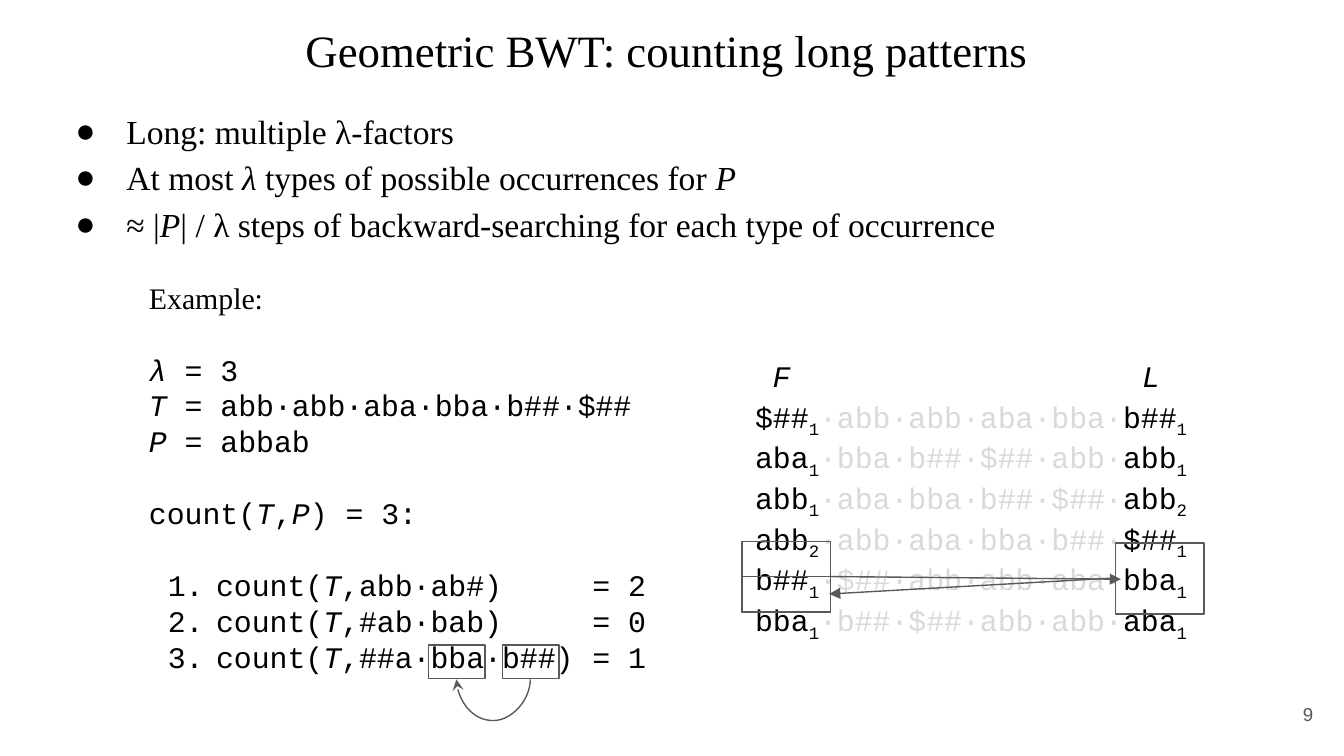
from lxml.etree import SubElement
from pptx import Presentation
from pptx.dml.color import RGBColor
from pptx.enum.shapes import MSO_CONNECTOR as Link, MSO_SHAPE as Shape
from pptx.enum.text import MSO_ANCHOR as Anchor, MSO_AUTO_SIZE as Fit, PP_ALIGN as Align
from pptx.oxml.ns import qn
from pptx.util import Inches, Pt

COLORS = {"text": "000000", "faded": "D9D9D9", "line": "595959"}
SERIF, MONO, SANS = "Times New Roman", "Courier New", "Arial"

TITLE = "Geometric BWT: counting long patterns "
POINTS = [
    "Long: multiple λ-factors",
    "At most *λ *types of possible occurrences for *P*",
    "≈ |*P*| / λ steps of backward-searching for each type of occurrence",
]
DEFINITIONS = ["*λ = *3", "*T* = abb·abb·aba·bba·b##·$##", "*P* = abbab"]
TOTAL = "count(*T*,*P*) = 3:"
COUNTS = ["count(*T*,abb·ab#)\t= 2", "count(*T*,#ab·bab)\t= 0", "count(*T*,##a·bba·b##)\t= 1"]
HEADER = "\t*F\tL*"
ROTATIONS = [
    ("$##", "1", "·abb·abb·aba·bba·", "b##", "1"),
    ("aba", "1", "·bba·b##·$##·abb·", "abb", "1"),
    ("abb", "1", "·aba·bba·b##·$##·", "abb", "2"),
    ("abb", "2", "·abb·aba·bba·b##·", "$##", "1"),
    ("b##", "1", "·$##·abb·abb·aba·", "bba", "1"),
    ("bba", "1", "·b##·$##·abb·abb·", "aba", "1"),
]
HIGHLIGHTS = [
    (5.52, 4.03, 0.66, 0.53),
    (5.52, 4.29, 0.66, 0.26),
    (8.3, 4.04, 0.66, 0.53),
    (3.74, 4.8, 0.42, 0.25),
    (3.19, 4.8, 0.42, 0.25),
]
MAPPINGS = [(6.17, 4.29, 8.34, 4.31), (8.3, 4.3, 6.17, 4.42)]
PAGE = "9"
GAP = 19.3
CURVE_SPAN, CURVE_DROP = 0.001, 0.26


def color(name):
    return RGBColor.from_string(COLORS[name])


def prepare(box, left, top, width, height, anchor=Anchor.TOP):
    box.left, box.top, box.width, box.height = map(Inches, (left, top, width, height))
    frame = box.text_frame
    frame.word_wrap, frame.auto_size, frame.vertical_anchor = True, Fit.NONE, anchor
    frame.margin_left = frame.margin_right = frame.margin_top = frame.margin_bottom = Inches(0.1)
    return frame


def next_line(frame):
    return frame.paragraphs[0] if not frame.text else frame.add_paragraph()


def add_run(line, words, font, size, tint="text", italic=False, subscript=False):
    run = line.add_run()
    run.text = words
    run.font.name, run.font.size, run.font.italic = font, Pt(size), italic
    run.font.color.rgb = color(tint)
    if subscript:
        run.font._element.set("baseline", "-25000")


def write(frame, marked, font, size, tint="text", before=0, align=Align.LEFT):
    line = next_line(frame)
    line.alignment, line.space_before = align, Pt(before)
    for index, words in enumerate(marked.split("*")):
        if words:
            add_run(line, words, font, size, tint, italic=index % 2 == 1)
    return line


def indent(line, margin, hanging):
    props = line._p.get_or_add_pPr()
    props.set("marL", str(Inches(margin)))
    props.set("indent", str(Inches(hanging)))
    return props


def add_bullet(props, font, tag, **attributes):
    tint = SubElement(props, qn("a:buClr"))
    SubElement(tint, qn("a:srgbClr"), val=COLORS["text"])
    SubElement(props, qn("a:buFont"), typeface=font)
    SubElement(props, qn(tag), **attributes)


def add_tabs(props, *positions):
    tabs = SubElement(props, qn("a:tabLst"))
    for position in positions:
        SubElement(tabs, qn("a:tab"), pos=str(Inches(position)), algn="l")


def add_arrow(slide, kind, ends, head):
    arrow = slide.shapes.add_connector(kind, *map(Inches, ends))
    arrow.line.color.rgb, arrow.line.width = color("line"), Pt(0.75)
    SubElement(arrow.line._get_or_add_ln(), qn("a:tailEnd"), type=head)
    SubElement(arrow._element.spPr, qn("a:effectLst"))
    return arrow


def add_text(slide, *place, anchor=Anchor.TOP):
    return prepare(slide.shapes.add_textbox(0, 0, 0, 0), *place, anchor=anchor)


def main():
    """Build the slide on counting long patterns with the geometric BWT."""
    deck = Presentation()
    deck.slide_width, deck.slide_height = Inches(10), Inches(10) * 9 // 16
    slide = deck.slides.add_slide(deck.slide_layouts[1])

    title = prepare(slide.shapes.title, 0.34, 0.07, 9.32, 0.63)
    write(title, TITLE, SERIF, 24, align=Align.CENTER)

    points = prepare(slide.placeholders[1], 0.34, 0.68, 9.32, 1.22)
    for point in POINTS:
        line = write(points, point, SERIF, 18)
        line.line_spacing = 1.15
        add_bullet(indent(line, 0.5, -0.38), SERIF, "a:buChar", char="●")

    example = add_text(slide, 1.01, 1.98, 4.12, 3.16)
    write(example, "Example:", SERIF, 16)
    for index, definition in enumerate(DEFINITIONS):
        write(example, definition, MONO, 16, before=0 if index else GAP)
    write(example, TOTAL, MONO, 16, before=GAP)
    for index, count in enumerate(COUNTS):
        props = indent(write(example, count, MONO, 16, before=0 if index else GAP), 0.5, -0.36)
        add_bullet(props, MONO, "a:buAutoNum", type="arabicPeriod")
        add_tabs(props, 3.3)

    matrix = add_text(slide, 5.52, 2.56, 3.61, 2.09)
    header = write(matrix, HEADER, MONO, 16)
    header.space_after = Pt(2.6)
    add_tabs(header._p.get_or_add_pPr(), 0.13, 2.88)
    for first, first_rank, middle, last, last_rank in ROTATIONS:
        line = next_line(matrix)
        add_run(line, first, MONO, 16)
        add_run(line, first_rank, MONO, 16, subscript=True)
        add_run(line, middle, MONO, 16, "faded")
        add_run(line, last, MONO, 16)
        add_run(line, last_rank, MONO, 16, subscript=True)

    for place in HIGHLIGHTS:
        frame = slide.shapes.add_shape(Shape.RECTANGLE, *map(Inches, place))
        frame.shadow.inherit = False
        frame.fill.background()
        frame.line.color.rgb, frame.line.width = color("line"), Pt(0.75)

    for ends in MAPPINGS:
        add_arrow(slide, Link.STRAIGHT, ends, "triangle")
    step = add_arrow(slide, Link.CURVE, (3.67, 4.78, 3.67 + CURVE_SPAN, 5.33), "stealth")
    step._element.spPr.find(qn("a:xfrm")).set("rot", str(90 * 60000))
    bend = step._element.spPr.find(qn("a:prstGeom")).find(qn("a:avLst"))
    ratio = round(CURVE_DROP / CURVE_SPAN * 100000)
    SubElement(bend, qn("a:gd"), name="adj1", fmla=f"val {ratio}")

    number = add_text(slide, 9.27, 5.1, 0.6, 0.43, anchor=Anchor.MIDDLE)
    write(number, PAGE, SANS, 10, "line", align=Align.RIGHT)

    deck.save("out.pptx")


if __name__ == "__main__":
    main()
